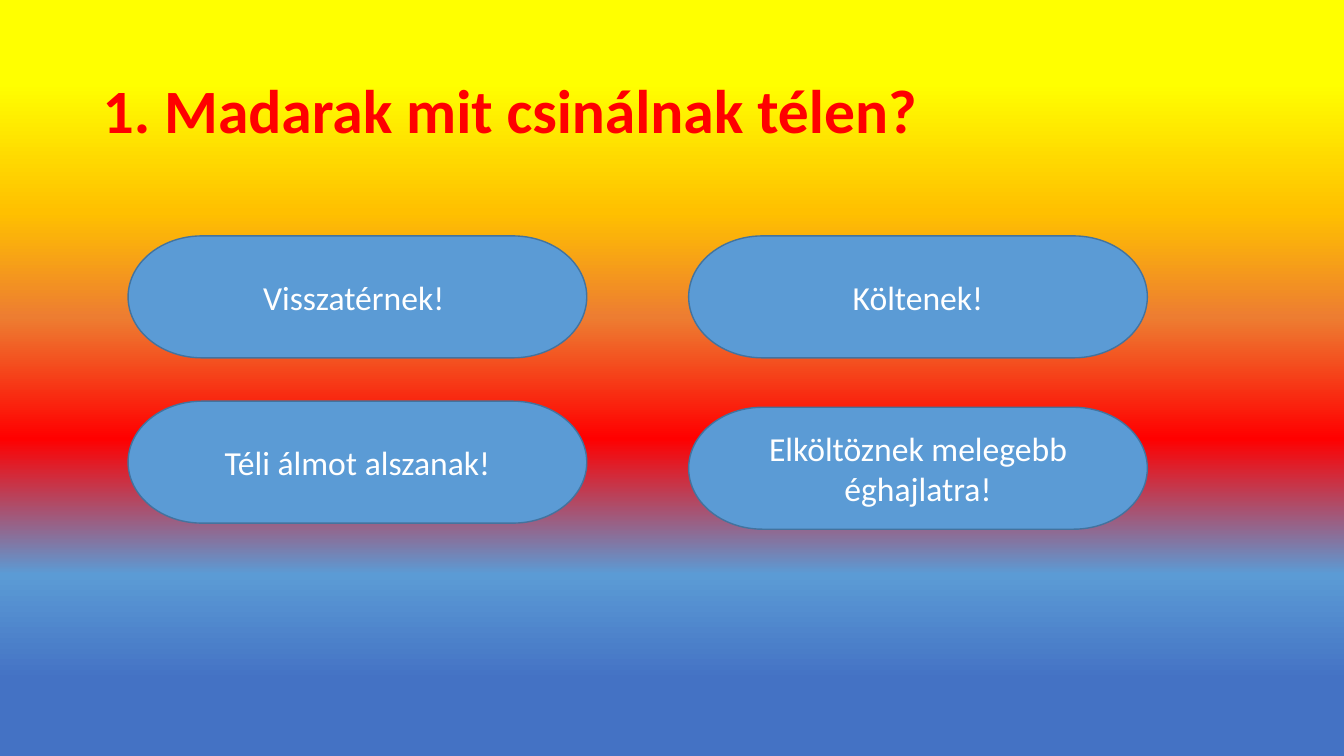
from lxml.etree import SubElement
from pptx import Presentation
from pptx.dml.color import RGBColor
from pptx.enum.shapes import MSO_SHAPE
from pptx.enum.text import MSO_ANCHOR, PP_ALIGN
from pptx.oxml.ns import qn
from pptx.util import Inches, Pt

RED = RGBColor(0xFF, 0x00, 0x00)
BLUE = RGBColor(0x5B, 0x9B, 0xD5)
EDGE = RGBColor(0x43, 0x73, 0x9E)
WHITE = RGBColor(0xFF, 0xFF, 0xFF)
GOLD = RGBColor(0xFF, 0xC0, 0x00)
YELLOW = RGBColor(0xFF, 0xFF, 0x00)
ORANGE = RGBColor(0xED, 0x7D, 0x31)
NAVY = RGBColor(0x44, 0x72, 0xC4)
STOPS = [(11, YELLOW), (28, GOLD), (42, ORANGE),
         (58, RED), (76, BLUE), (90, NAVY)]


def style(par, size, color, bold=False):
    font = par.runs[0].font
    font.name = "Calibri"
    font.size = Pt(size)
    font.bold = bold
    font.color.rgb = color


deck = Presentation()
deck.slide_width = Inches(13.33)
deck.slide_height = Inches(7.5)
slide = deck.slides.add_slide(deck.slide_layouts[6])

fill = slide.background.fill
fill.gradient()
fill.gradient_angle = 270
stops = slide.element.find(".//" + qn("a:gsLst"))
for old in list(stops):
    stops.remove(old)
for share, color in STOPS:
    stop = SubElement(stops, qn("a:gs"), pos=str(share * 1000))
    SubElement(stop, qn("a:srgbClr"), val=str(color))

title = slide.shapes.add_textbox(
    Inches(0.92), Inches(0.4), Inches(11.5), Inches(1.45))
frame = title.text_frame
frame.word_wrap = True
frame.vertical_anchor = MSO_ANCHOR.MIDDLE
frame.text = "1. Madarak mit csinálnak télen?"
frame.paragraphs[0].line_spacing = 0.9
style(frame.paragraphs[0], 44, RED, True)

LEFT, STEP = 1.27, 5.56
WIDTH, HEIGHT = 4.55, 1.21
ANSWERS = [
    [("Visszatérnek! ", 2.34), ("Költenek!", 2.34)],
    [("Téli álmot alszanak!", 3.98),
     ("Elköltöznek melegebb éghajlatra!", 4.04)],
]
for row in ANSWERS:
    for col, (text, top) in enumerate(row):
        pill = slide.shapes.add_shape(
            MSO_SHAPE.FLOWCHART_TERMINATOR,
            Inches(LEFT + col * STEP), Inches(top),
            Inches(WIDTH), Inches(HEIGHT))
        pill.shadow.inherit = False
        pill.fill.solid()
        pill.fill.fore_color.rgb = BLUE
        pill.line.color.rgb = EDGE
        pill.line.width = Pt(1)
        frame = pill.text_frame
        frame.word_wrap = True
        frame.vertical_anchor = MSO_ANCHOR.MIDDLE
        frame.text = text
        frame.paragraphs[0].alignment = PP_ALIGN.CENTER
        style(frame.paragraphs[0], 24, WHITE)

deck.save("out.pptx")
